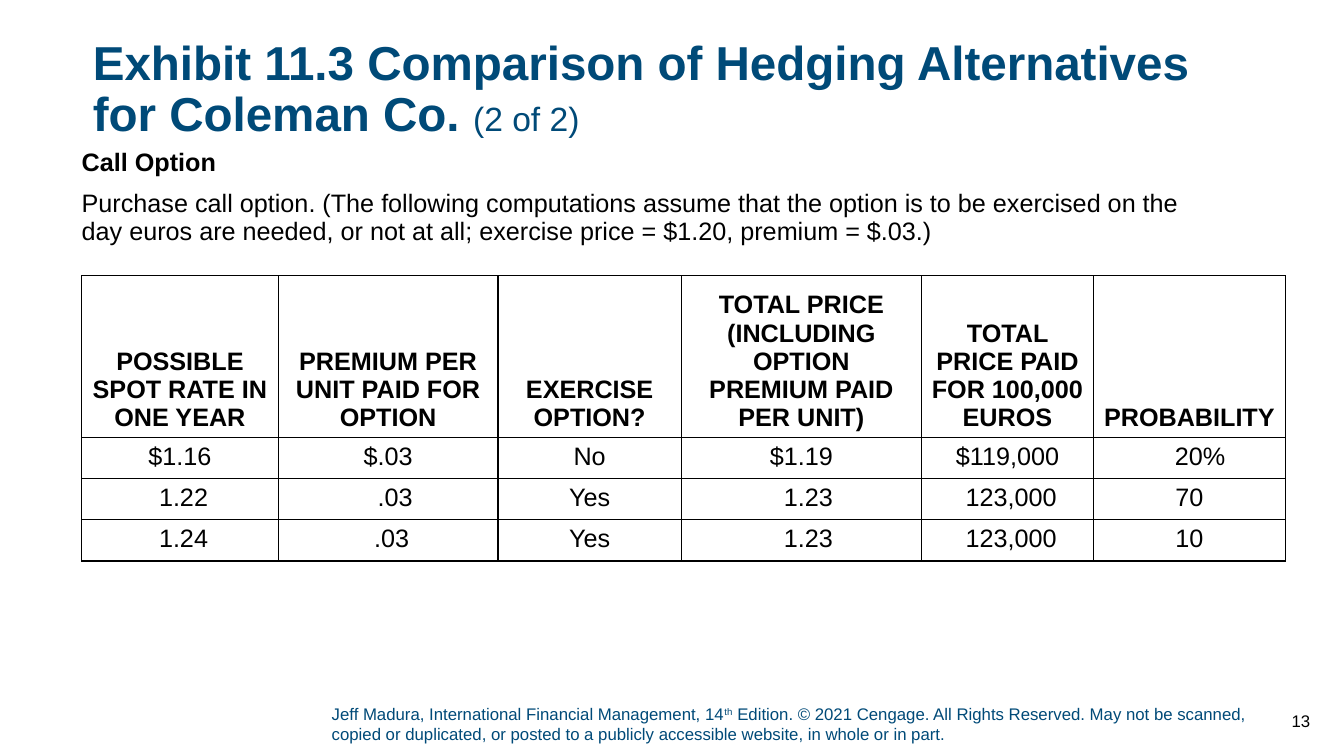
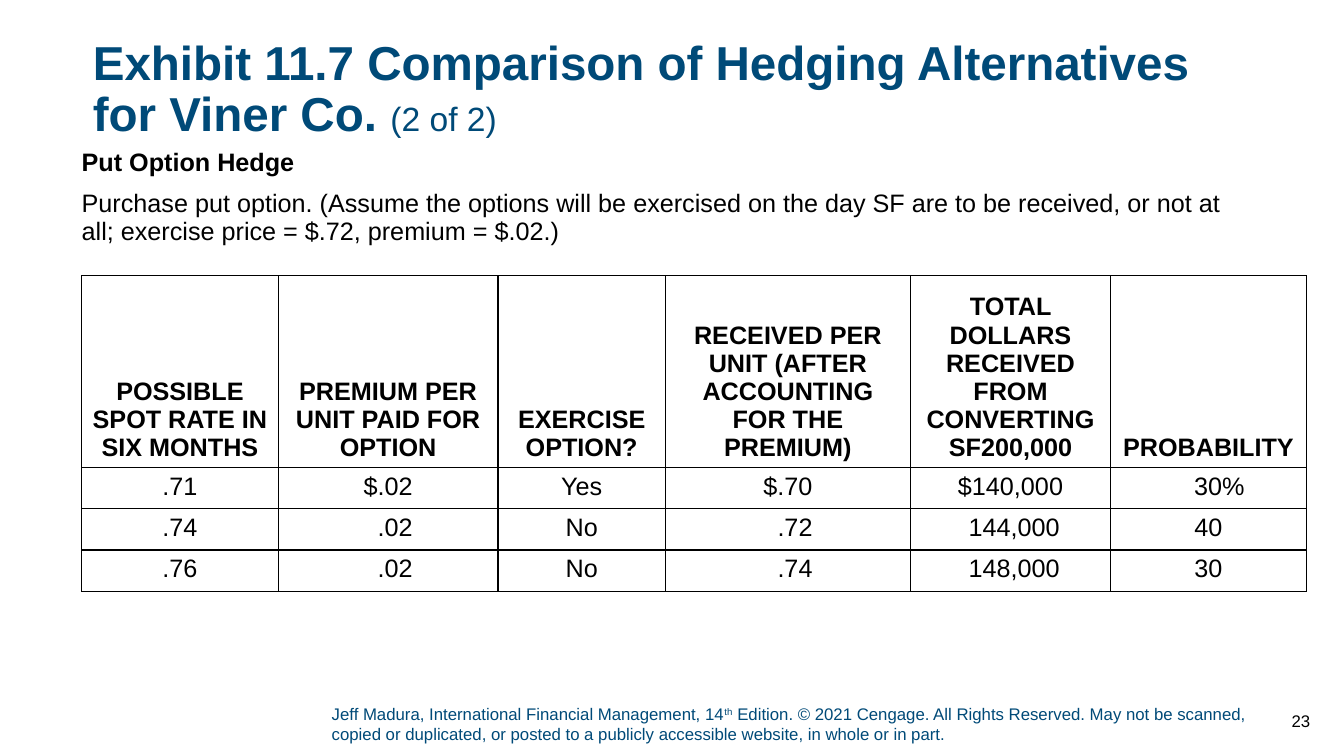
from lxml.etree import SubElement
from pptx import Presentation
from pptx.dml.color import RGBColor
from pptx.enum.text import MSO_ANCHOR, PP_ALIGN
from pptx.oxml.ns import qn
from pptx.util import Cm, Pt

FONT = "Arial"
NAVY = RGBColor(0x00, 0x4A, 0x78)
BLACK = RGBColor(0x00, 0x00, 0x00)

TITLE_BOX = Cm(2.34), Cm(0.99), Cm(29.21), Cm(2.46)
BODY_BOX = Cm(2.06), Cm(3.78), Cm(28.75), Cm(2.82)
TABLE_ORIGIN = Cm(2.06), Cm(6.95)
FOOTER_BOX = Cm(8.36), Cm(17.73), Cm(23.47), Cm(1.14)
NUMBER_BOX = Cm(31.9), Cm(17.65), Cm(1.37), Cm(1.02)

ROW_HEIGHT = Cm(1.04)
CELL_MARGIN = Cm(0.25)
INDENT_STEP = Cm(0.18)
INDENTS = [(0, 0, 0, 0, 0, 3), (1, 2, 0, 2, 1, 0), (1, 1, 0, 2, 1, 0)]
PUT_INDENTS = [(0, 0, 0, 0, 0, 3), (0, 2, 0, 2, 1, 0), (0, 2, 0, 2, 1, 0)]

EXHIBITS = [
    {
        "number": 13,
        "title": "Exhibit 11.3 Comparison of Hedging Alternatives for Coleman Co. ",
        "heading": "Call Option",
        "text": "Purchase call option. (The following computations assume that the option "
                "is to be exercised on the day euros are needed, or not at all; "
                "exercise price = $1.20, premium = $.03.)",
        "widths": (4.95, 5.54, 4.62, 6.05, 4.34, 4.83),
        "header_height": 3.8,
        "indents": INDENTS,
        "rows": [
            ("POSSIBLE SPOT RATE IN ONE YEAR", "PREMIUM PER UNIT PAID FOR OPTION",
             "EXERCISE OPTION?", "TOTAL PRICE (INCLUDING OPTION PREMIUM PAID PER UNIT)",
             "TOTAL PRICE PAID FOR 100,000 EUROS", "PROBABILITY"),
            ("$1.16", "$.03", "No", "$1.19", "$119,000", "20%"),
            ("1.22", ".03", "Yes", "1.23", "123,000", "70"),
            ("1.24", ".03", "Yes", "1.23", "123,000", "10"),
        ],
    },
    {
        "number": 23,
        "title": "Exhibit 11.7 Comparison of Hedging Alternatives for Viner Co. ",
        "heading": "Put Option Hedge",
        "text": "Purchase put option. (Assume the options will be exercised on the day "
                "SF are to be received, or not at all; "
                "exercise price = $.72, premium = $.02.)",
        "widths": (4.95, 5.54, 4.22, 6.17, 5.05, 4.93),
        "header_height": 4.5,
        "indents": PUT_INDENTS,
        "rows": [
            ("POSSIBLE SPOT RATE IN SIX MONTHS", "PREMIUM PER UNIT PAID FOR OPTION",
             "EXERCISE OPTION?", "RECEIVED PER UNIT (AFTER ACCOUNTING FOR THE PREMIUM)",
             "TOTAL DOLLARS RECEIVED FROM CONVERTING SF200,000", "PROBABILITY"),
            (".71", "$.02", "Yes", "$.70", "$140,000", "30%"),
            (".74", ".02", "No", ".72", "144,000", "40"),
            (".76", ".02", "No", ".74", "148,000", "30"),
        ],
    },
]


def style(p, size, color, bold=False, align=PP_ALIGN.LEFT):
    """Set the font and alignment of a paragraph."""
    p.alignment = align
    p.font.name = FONT
    p.font.size = Pt(size)
    p.font.bold = bold
    p.font.color.rgb = color


def add_text_frame(s, box, anchor=MSO_ANCHOR.TOP):
    """Add a wrapping text box without insets and return its frame."""
    tf = s.shapes.add_textbox(*box).text_frame
    tf.word_wrap = True
    tf.vertical_anchor = anchor
    tf.margin_left = tf.margin_right = tf.margin_top = tf.margin_bottom = 0
    return tf


def add_title(s, box, title):
    """Write the bold exhibit title and its lighter part count."""
    p = add_text_frame(s, box).paragraphs[0]
    p.line_spacing = 0.9
    style(p, 34, NAVY, bold=True)
    p.add_run().text = title
    r = p.add_run()
    r.text = "(2 of 2)"
    r.font.size = Pt(24)
    r.font.bold = False


def add_body(s, box, heading, text):
    """Write the bold heading and the paragraph below it."""
    tf = add_text_frame(s, box)
    p = tf.paragraphs[0]
    p.text = heading
    style(p, 18, BLACK, bold=True)
    p.line_spacing = 0.9
    p = tf.add_paragraph()
    p.text = text
    style(p, 18, BLACK)
    p.line_spacing = 0.9
    p.space_before = Pt(10)


def add_borders(cell):
    """Draw a thin black line on each side of a cell."""
    tc_pr = cell._tc.get_or_add_tcPr()
    for side in ("a:lnL", "a:lnR", "a:lnT", "a:lnB"):
        ln = SubElement(tc_pr, qn(side), w=str(Pt(1)))
        fill = SubElement(ln, qn("a:solidFill"))
        SubElement(fill, qn("a:srgbClr"), val=str(BLACK))


def fill_cell(cell, text, is_header, indent):
    """Write one centred table cell, shifted right by its indent."""
    add_borders(cell)
    cell.fill.background()
    cell.vertical_anchor = MSO_ANCHOR.BOTTOM if is_header else MSO_ANCHOR.TOP
    cell.margin_left = CELL_MARGIN + indent * INDENT_STEP
    cell.margin_right = CELL_MARGIN
    p = cell.text_frame.paragraphs[0]
    p.text = text
    style(p, 18, BLACK, bold=is_header, align=PP_ALIGN.CENTER)


def add_option_table(s, origin, exhibit):
    """Build the table of option outcomes."""
    rows, widths = exhibit["rows"], [Cm(w) for w in exhibit["widths"]]
    heights = [Cm(exhibit["header_height"])] + [ROW_HEIGHT] * (len(rows) - 1)
    table = s.shapes.add_table(len(rows), len(widths), *origin,
                               sum(widths), sum(heights)).table
    table.first_row = table.horz_banding = False
    for column, width in zip(table.columns, widths):
        column.width = width
    indents = [(0,) * len(widths)] + exhibit["indents"]
    for i, (values, shifts) in enumerate(zip(rows, indents)):
        table.rows[i].height = heights[i]
        for j, (value, shift) in enumerate(zip(values, shifts)):
            fill_cell(table.cell(i, j), value, i == 0, shift)


def add_footer(s, box):
    """Write the copyright line."""
    tf = add_text_frame(s, box, MSO_ANCHOR.BOTTOM)
    tf.margin_bottom = Cm(0.13)
    p = tf.paragraphs[0]
    style(p, 12, NAVY)
    p.add_run().text = "Jeff Madura, International Financial Management, 14"
    r = p.add_run()
    r.text = "th"
    r.font._element.set("baseline", "30000")
    p.add_run().text = (" Edition. © 2021 Cengage. All Rights Reserved. May not be scanned, "
                        "copied or duplicated, or posted to a publicly accessible website, "
                        "in whole or in part.")


def add_number(s, box, number):
    """Write the slide number."""
    tf = add_text_frame(s, box, MSO_ANCHOR.MIDDLE)
    tf.margin_right = Cm(0.25)
    p = tf.paragraphs[0]
    p.text = str(number)
    style(p, 12, BLACK, align=PP_ALIGN.RIGHT)


def add_exhibit_slide(prs, exhibit):
    """Add one exhibit slide with title, body, table and footer."""
    s = prs.slides.add_slide(prs.slide_layouts[6])
    add_footer(s, FOOTER_BOX)
    add_title(s, TITLE_BOX, exhibit["title"])
    add_body(s, BODY_BOX, exhibit["heading"], exhibit["text"])
    add_option_table(s, TABLE_ORIGIN, exhibit)
    add_number(s, NUMBER_BOX, exhibit["number"])


def main():
    """Build and save the presentation."""
    prs = Presentation()
    prs.slide_width, prs.slide_height = Cm(33.87), Cm(19.05)
    for exhibit in EXHIBITS:
        add_exhibit_slide(prs, exhibit)
    prs.save("out.pptx")


if __name__ == "__main__":
    main()
